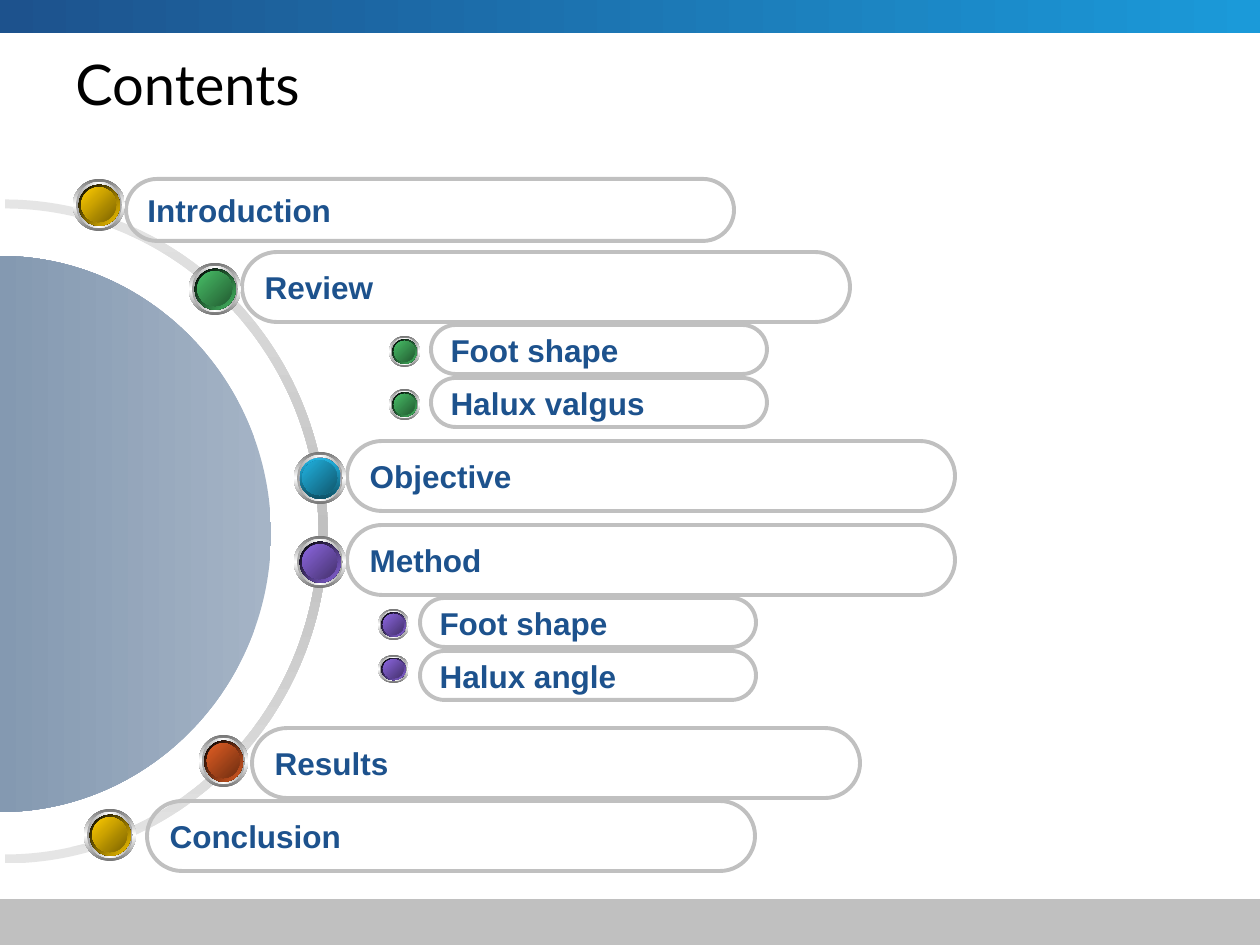
import dataclasses

import pptx
import pptx.dml.color
import pptx.enum.shapes
import pptx.enum.text
import pptx.oxml
import pptx.oxml.ns
import pptx.util

SHAPES = pptx.enum.shapes.MSO_SHAPE
EMU_PER_PX = 914400 / 126
SLIDE_W, SLIDE_H = 1260, 945
CURVE_PULL = 0.55


@dataclasses.dataclass(frozen=True)
class Theme:
    """Colours, fonts and type sizes of the slide."""
    title_font: str = "Lato"
    title_size: int = 32
    title_color: str = "000000"
    label_font: str = "Arial"
    label_size: int = 18
    label_color: str = "1D528D"
    outline: str = "C0C0C0"
    outline_width: float = 2.25
    header: tuple = ("1D528D", "1B9AD9")
    footer: str = "C0C0C0"
    ring: tuple = ("E5E5E5", "C0C0C0", "E5E5E5")
    disc: tuple = ("A5B4C6", "617C9A")
    bezel: tuple = ("767676", "FFFFFF", "767676")
    inner_bezel: tuple = ("A2A2A2", "FFFFFF", "A2A2A2")
    glint: tuple = ("FFFFFF", "153D69", "FFFFFF")
    shade: tuple = ("102F50", "153D69", "102F50")


@dataclasses.dataclass(frozen=True)
class Hue:
    """Rim and face gradients of a button."""
    rim: tuple
    face: tuple
    rim_angle: int = 45


THEME = Theme()
YELLOW = Hue(("000000", "FFCC00"), ("FFCC00", "7C6300"))
GREEN = Hue(("000000", "48BE67"), ("48BE67", "235C32"))
BLUE = Hue(("21B3E1", "0F5368"), ("21B3E1", "10576D"), 90)
PURPLE = Hue(("000000", "8D67E1"), ("8D67E1", "45326D"))
ORANGE = Hue(("000000", "E35E23"), ("E35E23", "6E2E11"))

TOPIC_W, TOPIC_H = 608, 70
SUBTOPIC_W, SUBTOPIC_H = 336, 49
TOPICS = [
    ("Results", (252, 728, TOPIC_W, TOPIC_H), (199, 735, 49, 52), ORANGE),
    ("Method", (347, 525, TOPIC_W, TOPIC_H), (294, 536, 52, 52), PURPLE),
    ("Objective", (347, 441, TOPIC_W, TOPIC_H), (294, 452, 52, 52), BLUE),
    ("Review", (242, 252, TOPIC_W, TOPIC_H), (189, 263, 52, 52), GREEN),
    ("Introduction", (126, 179, TOPIC_W, 62), (73, 179, 52, 52), YELLOW),
    ("Foot shape", (431, 325, SUBTOPIC_W, SUBTOPIC_H), (389, 336, 31, 31), GREEN),
    ("Halux valgus", (431, 378, SUBTOPIC_W, SUBTOPIC_H), (389, 389, 31, 31), GREEN),
    ("Halux angle", (420, 651, SUBTOPIC_W, SUBTOPIC_H), (378, 655, 31, 28), PURPLE),
    ("Foot shape", (420, 598, SUBTOPIC_W, SUBTOPIC_H), (378, 609, 31, 31), PURPLE),
    ("Conclusion", (147, 801, TOPIC_W, TOPIC_H), (84, 809, 52, 52), YELLOW),
]


def px(length):
    """Turn pixels into EMU."""
    return pptx.util.Emu(round(length * EMU_PER_PX))


def rgb(color):
    """Turn a hex string into a colour."""
    return pptx.dml.color.RGBColor.from_string(color)


def fill_gradient(shape, colors, angle):
    """Fill a shape with evenly spaced colours along a clockwise angle."""
    stops = "".join(
        f'<a:gs pos="{100000 * index // (len(colors) - 1)}"><a:srgbClr val="{color}"/></a:gs>'
        for index, color in enumerate(colors))
    gradient = pptx.oxml.parse_xml(
        f'<a:gradFill {pptx.oxml.ns.nsdecls("a")} rotWithShape="1"><a:gsLst>{stops}</a:gsLst>'
        f'<a:lin ang="{angle * 60000}" scaled="0"/></a:gradFill>')
    shape.fill.solid()
    properties = shape._element.spPr
    properties.replace(properties.find(pptx.oxml.ns.qn("a:solidFill")), gradient)


def add_plain(shapes, kind, box):
    """Add a preset shape without line or shadow."""
    shape = shapes.add_shape(kind, *map(px, box))
    shape.shadow.inherit = False
    shape.line.fill.background()
    return shape


def add_text(frame, text, font, size, color, bold):
    """Write one left-aligned, vertically centred run."""
    frame.word_wrap = True
    frame.vertical_anchor = pptx.enum.text.MSO_ANCHOR.MIDDLE
    paragraph = frame.paragraphs[0]
    paragraph.alignment = pptx.enum.text.PP_ALIGN.LEFT
    run = paragraph.add_run()
    run.text = text
    run.font.name = font
    run.font.size = pptx.util.Pt(size)
    run.font.bold = bold
    run.font.color.rgb = rgb(color)


def path_step(command, points):
    """Write one path command with its points."""
    marks = "".join(f'<a:pt x="{px(x)}" y="{px(y)}"/>' for x, y in points)
    return f"<a:{command}>{marks}</a:{command}>"


def dome(center, base, radius_x, radius_y, first, way):
    """Write a half ellipse over a base line; way is 1 rightward, -1 leftward."""
    reach, top = way * radius_x, base - radius_y
    pull_x, pull_y = CURVE_PULL * reach, base - CURVE_PULL * radius_y
    return (path_step(first, [(center - reach, base)])
            + path_step("cubicBezTo", [(center - reach, pull_y), (center - pull_x, top),
                                       (center, top)])
            + path_step("cubicBezTo", [(center + pull_x, top), (center + reach, pull_y),
                                       (center + reach, base)]))


def add_dome(shapes, box, steps, colors, angle):
    """Add a curved outline turned to face right."""
    left, top, width, height = box
    builder = shapes.build_freeform(px(left), px(top), scale=1.0)
    builder.add_line_segments([(px(left + width), px(top)),
                               (px(left + width), px(top + height))], close=True)
    shape = builder.convert_to_shape()
    outline = pptx.oxml.parse_xml(
        f'<a:path {pptx.oxml.ns.nsdecls("a")} w="{px(width)}" h="{px(height)}">'
        f'{steps}<a:close/></a:path>')
    paths = shape._element.spPr.find(".//" + pptx.oxml.ns.qn("a:pathLst"))
    paths.replace(paths[0], outline)
    shape.rotation = 90
    shape.shadow.inherit = False
    shape.line.fill.background()
    fill_gradient(shape, colors, angle)


def add_pill(shapes, box, label):
    """Add a rounded outline holding a label."""
    pill = add_plain(shapes, SHAPES.ROUNDED_RECTANGLE, box)
    pill.adjustments[0] = 0.5
    pill.fill.background()
    pill.line.color.rgb = rgb(THEME.outline)
    pill.line.width = pptx.util.Pt(THEME.outline_width)
    add_text(pill.text_frame, label, THEME.label_font, THEME.label_size, THEME.label_color, True)


def add_button(shapes, box, hue):
    """Add a grouped glossy button of stacked ellipses."""
    left, top, width, height = box
    layers = [(0, 1, THEME.bezel, 90), (0.06, 0.88, THEME.inner_bezel, 0),
              (0.11, 0.79, THEME.glint, 45), (0.11, 0.79, hue.rim, hue.rim_angle),
              (0.16, 0.67, THEME.shade, 315), (0.16, 0.67, hue.face, 45)]
    button = shapes.add_group_shape()
    for inset, share, colors, angle in layers:
        layer_box = (left + inset * width, top + inset * height, share * width, share * height)
        fill_gradient(add_plain(button.shapes, SHAPES.OVAL, layer_box), colors, angle)


def add_frame(shapes):
    """Add the footer bar, the header band and the title."""
    footer = add_plain(shapes, SHAPES.RECTANGLE, (0, 899, SLIDE_W, 46))
    footer.fill.solid()
    footer.fill.fore_color.rgb = rgb(THEME.footer)
    header = add_plain(shapes, SHAPES.RECTANGLE, (0, 0, SLIDE_W, 33))
    fill_gradient(header, THEME.header, 0)
    title = shapes.add_textbox(*map(px, (63, 44, 1134, 78)))
    add_text(title.text_frame, "Contents", THEME.title_font, THEME.title_size,
             THEME.title_color, False)


def main():
    """Build and save the contents slide."""
    deck = pptx.Presentation()
    deck.slide_width, deck.slide_height = px(SLIDE_W), px(SLIDE_H)
    shapes = deck.slides.add_slide(deck.slide_layouts[6]).shapes
    add_frame(shapes)
    ring = dome(332, 323, 323, 314, "moveTo", 1) + dome(332, 323, 332, 323, "lnTo", -1)
    add_dome(shapes, (-334, 203, 665, 658), ring, THEME.ring, 0)
    disc = dome(278, 271, 278, 271, "moveTo", 1)
    add_dome(shapes, (-278, 263, 556, 542), disc, THEME.disc, 90)
    for label, pill_box, _, _ in TOPICS:
        add_pill(shapes, pill_box, label)
    for _, _, button_box, hue in TOPICS:
        add_button(shapes, button_box, hue)
    deck.save("out.pptx")


if __name__ == "__main__":
    main()
